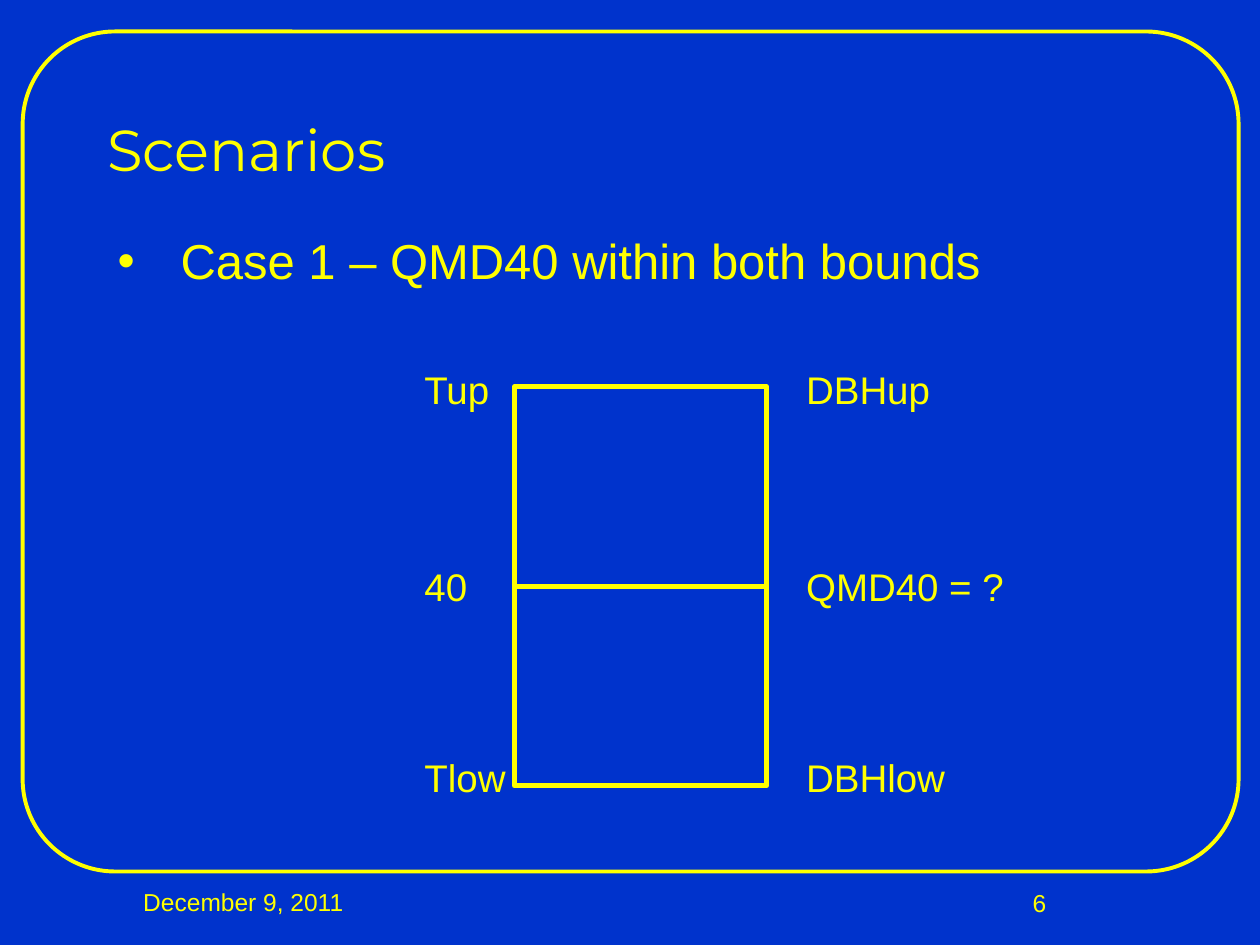
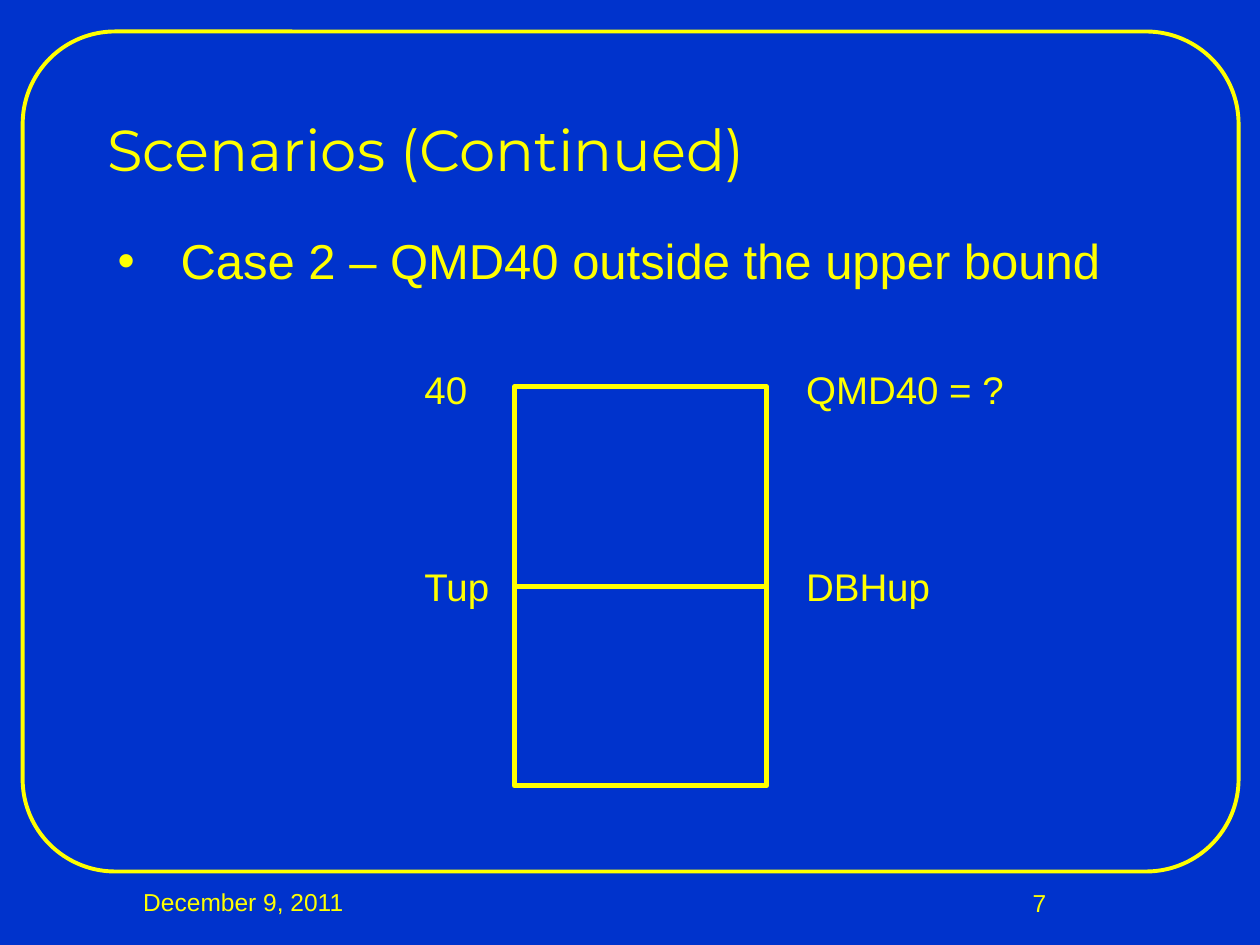
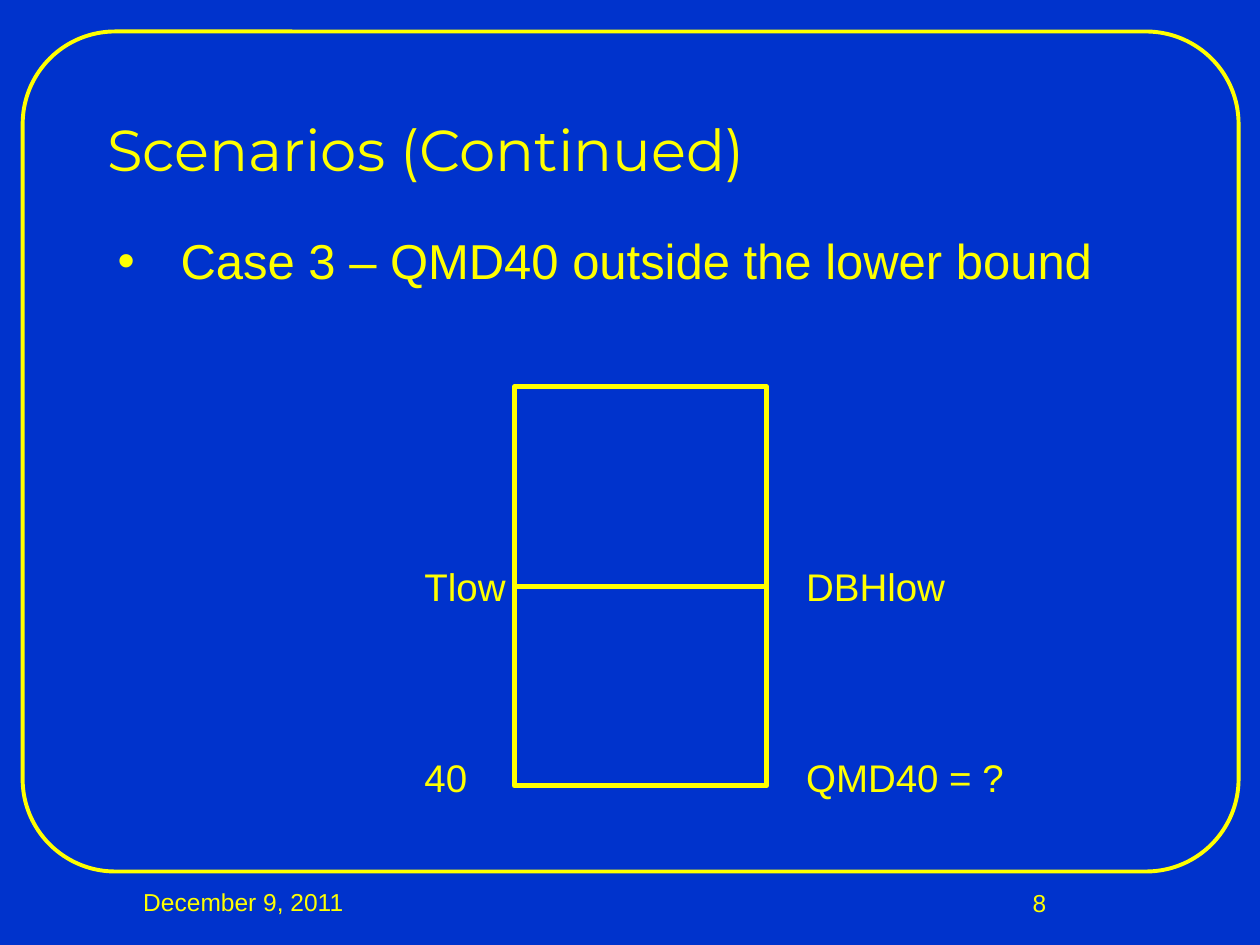
from dataclasses import dataclass

from lxml import etree
from pptx import Presentation
from pptx.dml.color import RGBColor
from pptx.enum.shapes import MSO_CONNECTOR, MSO_SHAPE
from pptx.enum.text import MSO_ANCHOR, MSO_AUTO_SIZE as AUTO, PP_ALIGN
from pptx.oxml.ns import qn
from pptx.util import Inches, Pt

# Shared look
BLUE, YELLOW = "0033CC", "FFFF00"
TITLE_FONT, BODY_FONT = "Montserrat", "Arial"
DATE = "December 9, 2011 "
FIRST_NUMBER = 6
CELL = Inches(10) / 120  # the slide is a grid of 120 columns by 90 rows


@dataclass(frozen=True)
class Box:
    col: float
    row: float
    cols: float
    rows: float

    def lengths(self) -> list[int]:
        return [round(n * CELL) for n in (self.col, self.row, self.cols, self.rows)]


@dataclass(frozen=True)
class Level:
    row: int  # 0 top edge, 1 middle line, 2 bottom edge
    threshold: str
    diameter: str


@dataclass(frozen=True)
class Scenario:
    title: str
    case: str
    levels: list[Level]


FRAME = Box(2.16, 3, 115.8, 80)
TITLE = Box(9, 7, 101, 11)
BODY = Box(10, 22, 101, 55)
DATE_BOX = Box(10, 83.88, 27, 6)
NUMBER_BOX = Box(87, 84, 24, 6)
RANGE_BOX = Box(49, 36.84, 24, 38)
THRESHOLD_COL, DIAMETER_COL = 39.24, 75.6
LEVEL_ROWS = [34.8, 53.52, 71.76]
LABEL_ROWS = 5.16
LABEL_COLS = {"40": 6.6, "Tup": 8.64, "Tlow": 10.2,
              "DBHup": 14.4, "DBHlow": 15.84, "QMD40 = ?": 21.48}

SCENARIOS = [
    Scenario("Scenarios", "Case 1 – QMD40 within both bounds",
             [Level(0, "Tup", "DBHup"), Level(2, "Tlow", "DBHlow"),
              Level(1, "40", "QMD40 = ?")]),
    Scenario("Scenarios (Continued)", "Case 2 – QMD40 outside the upper bound",
             [Level(0, "40", "QMD40 = ?"), Level(1, "Tup", "DBHup")]),
    Scenario("Scenarios (Continued)", "Case 3 – QMD40 outside the lower bound",
             [Level(2, "40", "QMD40 = ?"), Level(1, "Tlow", "DBHlow")]),
]


def rgb(color: str) -> RGBColor:
    return RGBColor.from_string(color)


def write(shape, text: str, size: float, font: str = BODY_FONT,
          align=PP_ALIGN.LEFT, anchor=MSO_ANCHOR.TOP):
    """Fill a shape with one formatted paragraph and return it."""
    tf = shape.text_frame
    tf.text = text
    tf.word_wrap, tf.auto_size, tf.vertical_anchor = True, AUTO.NONE, anchor
    p = tf.paragraphs[0]
    p.alignment = align
    f = p.runs[0].font
    f.size, f.name, f.color.rgb = Pt(size), font, rgb(YELLOW)
    return p


def place(shape, box: Box) -> None:
    shape.left, shape.top, shape.width, shape.height = box.lengths()


def outline(shape, width: float) -> None:
    shape.line.color.rgb = rgb(YELLOW)
    shape.line.width = Pt(width)


def add_outline(shapes, kind, box: Box, width: float):
    shape = shapes.add_shape(kind, *box.lengths())
    shape.shadow.inherit = False
    shape.fill.background()
    outline(shape, width)
    return shape


def add_bullet(p) -> None:
    pPr = p._p.get_or_add_pPr()
    pPr.set("marL", str(Inches(0.5)))
    pPr.set("indent", str(-Inches(0.5)))
    color = etree.SubElement(pPr, qn("a:buClr"))
    etree.SubElement(color, qn("a:srgbClr"), val=YELLOW)
    etree.SubElement(pPr, qn("a:buFont"), typeface=BODY_FONT)
    etree.SubElement(pPr, qn("a:buChar"), char="•")


def add_base(s, number: int) -> None:
    """Background, rounded frame and footers."""
    s.background.fill.solid()
    s.background.fill.fore_color.rgb = rgb(BLUE)
    frame = add_outline(s.shapes, MSO_SHAPE.ROUNDED_RECTANGLE, FRAME, 2.25)
    frame.adjustments[0] = 0.11
    s.shapes.element.insert(2, frame.element)  # behind the placeholders
    for box, text in ((DATE_BOX, DATE), (NUMBER_BOX, str(number))):
        write(s.shapes.add_textbox(*box.lengths()), text, 14, align=PP_ALIGN.CENTER)


def add_text(s, scenario: Scenario) -> None:
    title, body = s.shapes.title, s.placeholders[1]
    place(title, TITLE)
    write(title, scenario.title, 33, TITLE_FONT, anchor=MSO_ANCHOR.BOTTOM)
    place(body, BODY)
    p = write(body, scenario.case, 28)
    p.line_spacing, p.space_before = 0.9, Pt(6)
    add_bullet(p)


def add_range(s) -> None:
    """The range box with its middle line."""
    shapes = s.shapes.add_group_shape().shapes
    box = add_outline(shapes, MSO_SHAPE.FLOWCHART_PROCESS, RANGE_BOX, 3)
    line = shapes.add_connector(MSO_CONNECTOR.STRAIGHT, 0, 0, 0, 0)
    line.begin_connect(box, 1)
    line.end_connect(box, 3)
    outline(line, 3)
    etree.SubElement(line.element.spPr, qn("a:effectLst"))


def add_labels(s, col: float, labels: list[tuple[int, str]]) -> None:
    shapes = s.shapes.add_group_shape().shapes
    for row, text in labels:
        box = Box(col, LEVEL_ROWS[row], LABEL_COLS[text], LABEL_ROWS)
        label = shapes.add_textbox(*box.lengths())
        p = write(label, text, 22)
        p.line_spacing = 0.9
        for tag, share in (("a:spcBef", "20000"), ("a:spcAft", "30000")):
            spacing = etree.SubElement(p._p.get_or_add_pPr(), qn(tag))
            etree.SubElement(spacing, qn("a:spcPct"), val=share)
        label.text_frame.word_wrap = False
        label.text_frame.auto_size = AUTO.SHAPE_TO_FIT_TEXT


def main() -> None:
    prs = Presentation()
    prs.slide_width, prs.slide_height = Inches(10), Inches(7.5)
    for number, scenario in enumerate(SCENARIOS, FIRST_NUMBER):
        s = prs.slides.add_slide(prs.slide_layouts[1])
        add_base(s, number)
        add_text(s, scenario)
        add_range(s)
        add_labels(s, THRESHOLD_COL, [(v.row, v.threshold) for v in scenario.levels])
        add_labels(s, DIAMETER_COL, [(v.row, v.diameter) for v in scenario.levels])
    prs.save("out.pptx")


if __name__ == "__main__":
    main()
